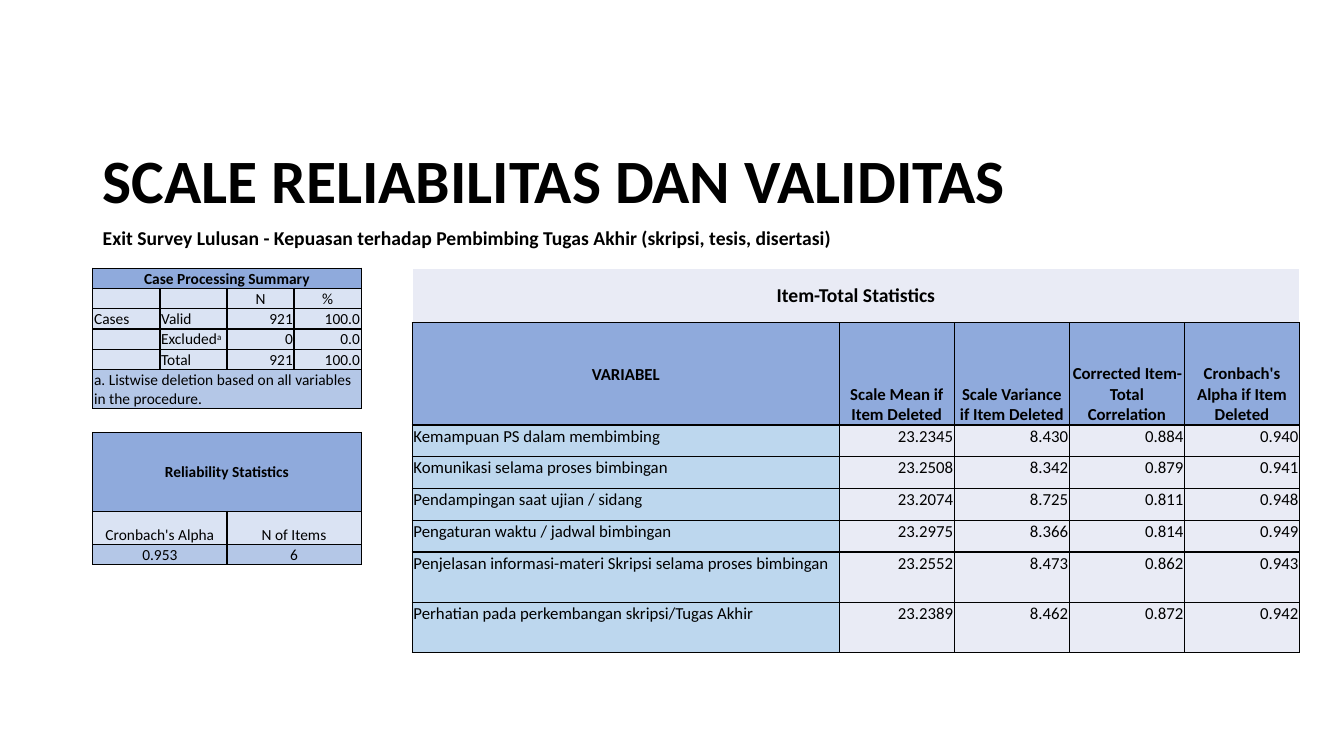
import dataclasses

import pptx
import pptx.dml.color
import pptx.enum.text
import pptx.oxml
import pptx.oxml.ns
import pptx.util
from lxml import etree

Cm = pptx.util.Cm
Pt = pptx.util.Pt
RGBColor = pptx.dml.color.RGBColor
ALIGN = pptx.enum.text.PP_ALIGN
ANCHOR = pptx.enum.text.MSO_ANCHOR
qn = pptx.oxml.ns.qn

BLACK = RGBColor(0x00, 0x00, 0x00)
WHITE = RGBColor(0xFF, 0xFF, 0xFF)
HEADER_BLUE = RGBColor(0x8F, 0xAA, 0xDC)
PALE_BLUE = RGBColor(0xDA, 0xE3, 0xF3)
MID_BLUE = RGBColor(0xB4, 0xC7, 0xE7)
SKY_BLUE = RGBColor(0xBD, 0xD7, 0xEE)
GREY = RGBColor(0xE9, 0xEB, 0xF5)

LEFT = Cm(2.34)
TABLE_TOP = Cm(6.76)

CASES = [
    ["Cases", "Valid", "921", "100.0"],
    ["", "Excluded^a", "0", "0.0"],
    ["", "Total", "921", "100.0"],
]
STATISTICS_HEADS = [
    "VARIABEL",
    "Scale Mean if Item Deleted",
    "Scale Variance if Item Deleted",
    "Corrected Item-Total Correlation",
    "Cronbach's Alpha if Item Deleted",
]
ITEMS = [
    ["Kemampuan PS dalam membimbing", "23.2345", "8.430", "0.884", "0.940"],
    ["Komunikasi selama proses bimbingan", "23.2508", "8.342", "0.879", "0.941"],
    ["Pendampingan saat ujian / sidang", "23.2074", "8.725", "0.811", "0.948"],
    ["Pengaturan waktu / jadwal bimbingan", "23.2975", "8.366", "0.814", "0.949"],
    ["Penjelasan informasi-materi Skripsi selama proses bimbingan",
     "23.2552", "8.473", "0.862", "0.943"],
    ["Perhatian pada perkembangan skripsi/Tugas Akhir",
     "23.2389", "8.462", "0.872", "0.942"],
]


@dataclasses.dataclass
class Row:
    """Texts and look of one table row; a single text spans all columns."""
    texts: list
    height: float
    fill: RGBColor
    size: int = 11
    bold: bool = False
    align: str = "c"
    anchor: ANCHOR = ANCHOR.TOP
    first_fill: RGBColor = None
    first_anchor: ANCHOR = None
    edge: RGBColor = BLACK


def add_run(paragraph, text, size, bold):
    """Add one black Calibri run and return it."""
    run = paragraph.add_run()
    run.text = text
    run.font.name = "Calibri"
    run.font.size = Pt(size)
    run.font.bold = bold
    run.font.color.rgb = BLACK
    return run


def add_heading(slide, top, width, height, text, size, anchor):
    """Add a bold heading line on the left margin."""
    heading = slide.shapes.add_textbox(LEFT, top, width, height).text_frame
    heading.word_wrap = True
    heading.vertical_anchor = anchor
    heading.paragraphs[0].line_spacing = 0.9
    add_run(heading.paragraphs[0], text, size, True)


def set_borders(cell, edge):
    """Draw one-point borders, black below and in the edge colour elsewhere."""
    properties = cell._tc.get_or_add_tcPr()
    for tag, color in (("lnL", edge), ("lnR", edge), ("lnT", edge), ("lnB", BLACK)):
        line = etree.SubElement(properties, qn("a:" + tag), w=str(Pt(1)))
        fill = etree.SubElement(line, qn("a:solidFill"))
        etree.SubElement(fill, qn("a:srgbClr"), val=str(color))


def fill_cell(cell, text, row, align, fill, anchor):
    """Format one cell and write its text, raising what follows a caret."""
    set_borders(cell, row.edge)
    cell.fill.solid()
    cell.fill.fore_color.rgb = fill
    cell.margin_left = cell.margin_right = cell.margin_top = Cm(0.03)
    cell.margin_bottom = 0
    cell.vertical_anchor = anchor
    paragraph = cell.text_frame.paragraphs[0]
    paragraph.alignment = align
    base, _, raised = text.partition("^")
    if base:
        add_run(paragraph, base, row.size, row.bold)
    else:
        etree.SubElement(paragraph._p, qn("a:endParaRPr"), sz=str(row.size * 100))
    if raised:
        mark = add_run(paragraph, raised, row.size, row.bold)
        mark.font._element.set("baseline", "30000")


def add_statistics_table(slide, left, top, widths, rows):
    """Add a table from column widths in centimetres and a list of rows."""
    aligns = {"l": ALIGN.LEFT, "c": ALIGN.CENTER, "r": ALIGN.RIGHT}
    frame = slide.shapes.add_table(
        len(rows), len(widths), left, top,
        Cm(sum(widths)), Cm(sum(row.height for row in rows)))
    table = frame.table
    table.first_row = table.horz_banding = False
    for column, width in zip(table.columns, widths):
        column.width = Cm(width)
    for r, row in enumerate(rows):
        table.rows[r].height = Cm(row.height)
        codes = row.align.ljust(len(widths), row.align[-1])
        for c in range(len(widths)):
            text = row.texts[c] if c < len(row.texts) else ""
            fill = row.first_fill if c == 0 and row.first_fill else row.fill
            anchor = row.first_anchor if c == 0 and row.first_anchor else row.anchor
            fill_cell(table.cell(r, c), text, row, aligns[codes[c]], fill, anchor)
        if len(row.texts) == 1:
            table.cell(r, 0).merge(table.cell(r, len(widths) - 1))


def main():
    """Build the reliability and validity slide."""
    deck = pptx.Presentation()
    deck.slide_width, deck.slide_height = Cm(33.87), Cm(19.05)
    slide = deck.slides.add_slide(deck.slide_layouts[6])

    add_heading(slide, Cm(5.64), Cm(20.75), Cm(1.14),
                "Exit Survey Lulusan - Kepuasan terhadap Pembimbing Tugas Akhir "
                "(skripsi, tesis, disertasi)", 14, ANCHOR.TOP)
    add_heading(slide, Cm(3.43), Cm(29.21), Cm(2.41),
                "SCALE RELIABILITAS DAN VALIDITAS", 44, ANCHOR.MIDDLE)

    add_statistics_table(slide, LEFT, TABLE_TOP, [1.69] * 4, [
        Row(["Case Processing Summary"], 0.51, HEADER_BLUE,
            bold=True, anchor=ANCHOR.MIDDLE),
        Row(["", "", "N", "%"], 0.51, PALE_BLUE, anchor=ANCHOR.BOTTOM),
        *[Row(case, 0.51, PALE_BLUE, align="llr") for case in CASES],
        Row(["a. Listwise deletion based on all variables in the procedure."],
            0.98, MID_BLUE, align="l"),
    ])
    add_statistics_table(slide, LEFT, Cm(10.9), [3.38] * 2, [
        Row(["Reliability Statistics"], 1.98, HEADER_BLUE,
            bold=True, anchor=ANCHOR.MIDDLE),
        Row(["Cronbach's Alpha", "N of Items"], 0.84, PALE_BLUE, anchor=ANCHOR.BOTTOM),
        Row(["0.953", "6"], 0.51, MID_BLUE),
    ])
    add_statistics_table(slide, Cm(10.39), TABLE_TOP, [10.76] + [2.9] * 4, [
        Row(["Item-Total Statistics"], 1.37, GREY, size=14, bold=True,
            anchor=ANCHOR.MIDDLE, edge=WHITE),
        Row(STATISTICS_HEADS, 2.58, HEADER_BLUE, size=12, bold=True,
            anchor=ANCHOR.BOTTOM, first_anchor=ANCHOR.MIDDLE),
        *[Row(item, 0.8 if i < 4 else 1.27, GREY, size=12, align="lr",
              first_fill=SKY_BLUE) for i, item in enumerate(ITEMS)],
    ])
    deck.save("out.pptx")


if __name__ == "__main__":
    main()
